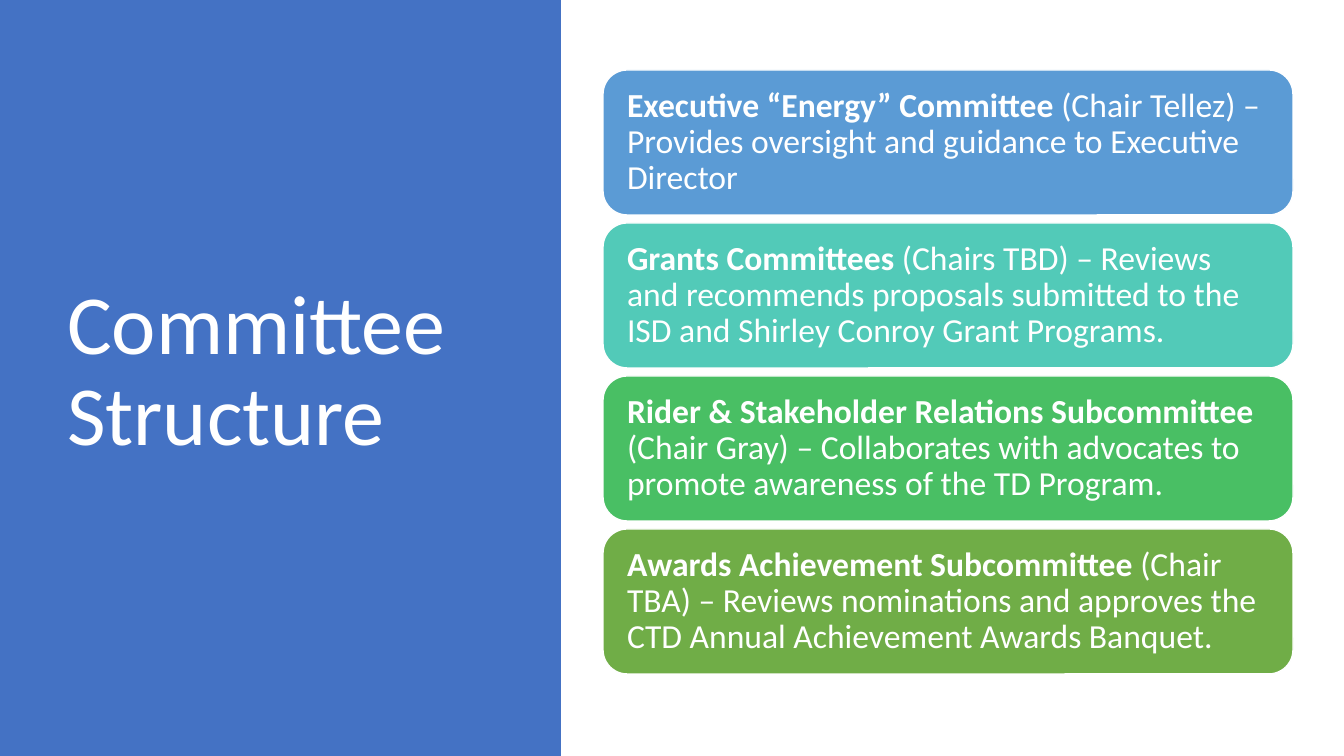
from pptx import Presentation
from pptx.dml.color import RGBColor
from pptx.enum.shapes import MSO_SHAPE
from pptx.enum.text import MSO_ANCHOR, MSO_AUTO_SIZE, PP_ALIGN
from pptx.util import Pt

WHITE = RGBColor(0xFF, 0xFF, 0xFF)
BLUE = RGBColor(0x44, 0x72, 0xC4)
SKY = RGBColor(0x5B, 0x9B, 0xD5)
TEAL = RGBColor(0x52, 0xCA, 0xB8)
GREEN = RGBColor(0x49, 0xBF, 0x64)
OLIVE = RGBColor(0x70, 0xAD, 0x47)

FONT = "Calibri"
TITLE = "Committee Structure"
COMMITTEES = [
    ("Executive “Energy” Committee",
     " (Chair Tellez) – Provides oversight and guidance to Executive Director", SKY),
    ("Grants Committees",
     " (Chairs TBD) – Reviews and recommends proposals submitted to the ISD "
     "and Shirley Conroy Grant Programs.", TEAL),
    ("Rider & Stakeholder Relations Subcommittee",
     " (Chair Gray) – Collaborates with advocates to promote awareness of the "
     "TD Program.", GREEN),
    ("Awards Achievement Subcommittee",
     " (Chair TBA) – Reviews nominations and approves the CTD Annual "
     "Achievement Awards Banquet.", OLIVE),
]

SLIDE_WIDTH, SLIDE_HEIGHT = 1344, 756
PANEL_WIDTH = 561
TITLE_BOX = (57, 69, 419, 607)
CARD_LEFT, CARD_TOP, CARD_WIDTH, CARD_HEIGHT = 603, 70, 690, 145
CARD_PITCH = 153
CARD_INSET = 17


def px(length):
    return round(length * 914400 / 100.8)


def add_filled_shape(slide, kind, box, color):
    shape = slide.shapes.add_shape(kind, *map(px, box))
    shape.shadow.inherit = False
    shape.fill.solid()
    shape.fill.fore_color.rgb = color
    shape.line.fill.background()
    return shape


def format_run(run, size, bold=False):
    run.font.name = FONT
    run.font.size = Pt(size)
    run.font.bold = bold
    run.font.color.rgb = WHITE


def add_title(slide):
    title = slide.shapes.title
    title.left, title.top, title.width, title.height = map(px, TITLE_BOX)
    frame = title.text_frame
    frame.text = TITLE
    frame.word_wrap = True
    frame.auto_size = MSO_AUTO_SIZE.NONE
    frame.vertical_anchor = MSO_ANCHOR.MIDDLE
    paragraph = frame.paragraphs[0]
    paragraph.alignment = PP_ALIGN.LEFT
    paragraph.line_spacing = 0.9
    format_run(paragraph.runs[0], 60)


def add_card(slide, top, name, duty, color):
    box = (CARD_LEFT, top, CARD_WIDTH, CARD_HEIGHT)
    card = add_filled_shape(slide, MSO_SHAPE.ROUNDED_RECTANGLE, box, color)
    card.line.color.rgb = WHITE
    card.line.width = Pt(1)
    frame = card.text_frame
    frame.word_wrap = True
    frame.vertical_anchor = MSO_ANCHOR.MIDDLE
    frame.margin_left = frame.margin_right = px(CARD_INSET)
    frame.margin_top = frame.margin_bottom = px(CARD_INSET)
    paragraph = frame.paragraphs[0]
    paragraph.alignment = PP_ALIGN.LEFT
    paragraph.line_spacing = 0.9
    for text, bold in ((name, True), (duty, False)):
        run = paragraph.add_run()
        run.text = text
        format_run(run, 24, bold)


def main():
    presentation = Presentation()
    presentation.slide_width = px(SLIDE_WIDTH)
    presentation.slide_height = px(SLIDE_HEIGHT)
    slide = presentation.slides.add_slide(presentation.slide_layouts[5])

    panel = add_filled_shape(slide, MSO_SHAPE.RECTANGLE,
                             (0, 0, PANEL_WIDTH, SLIDE_HEIGHT), BLUE)
    add_title(slide)
    # The panel goes behind the title placeholder.
    slide.shapes.title.element.addprevious(panel.element)
    for index, committee in enumerate(COMMITTEES):
        add_card(slide, CARD_TOP + index * CARD_PITCH, *committee)

    presentation.save("out.pptx")


if __name__ == "__main__":
    main()
